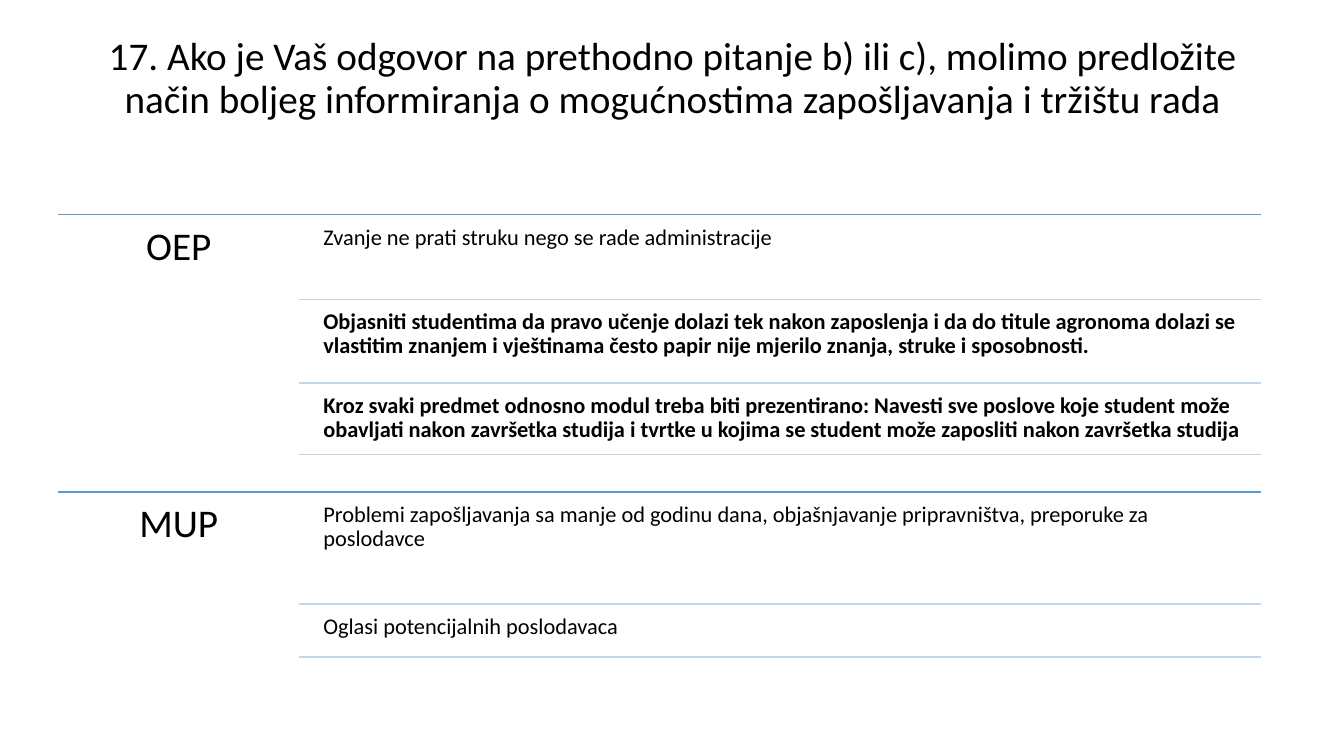
"""Build the survey slide on better informing students about employment."""
from dataclasses import dataclass

from pptx import Presentation
from pptx.dml.color import RGBColor as RGB
from pptx.enum.shapes import MSO_CONNECTOR as Conn
from pptx.enum.text import MSO_ANCHOR as Anchor, MSO_AUTO_SIZE as AutoSize, PP_ALIGN as Align
from pptx.oxml.ns import qn
from pptx.shapes.shapetree import GroupShapes
from pptx.text.text import TextFrame
from pptx.util import Cm, Pt


@dataclass(frozen=True)
class Theme:
    font: str = "Calibri"
    text: RGB = RGB(0x00, 0x00, 0x00)
    section_rule: RGB = RGB(0x5B, 0x9B, 0xD5)
    answer_rule: RGB = RGB(0xC4, 0xD5, 0xEB)
    heading_size: int = 28
    answer_size: int = 16
    rule_width: int = 1
    line_spacing: float = 0.9


@dataclass(frozen=True)
class Answer:
    text: str
    bottom: float
    bold: bool = False


@dataclass(frozen=True)
class Section:
    label: str
    top: float
    answers: tuple[Answer, ...]


THEME = Theme()
LEFT, ANSWER_LEFT, RIGHT = 1.47, 7.54, 31.78
ANSWER_INDENT, ANSWER_GAP = 0.44, 0.11
LABEL_INSET, ANSWER_INSET = 0.3, 0.17

TITLE = ("17. Ako je Vaš odgovor na prethodno pitanje b) ili c), molimo predložite "
         "način boljeg informiranja o mogućnostima zapošljavanja i tržištu rada")
SECTIONS = (
    Section("OEP", 5.41, (
        Answer("Zvanje ne prati struku nego se rade administracije", 7.54),
        Answer("Objasniti studentima da pravo učenje dolazi tek nakon zaposlenja i da do "
               "titule agronoma dolazi se vlastitim znanjem i vještinama često papir nije "
               "mjerilo znanja, struke i sposobnosti.", 9.65, True),
        Answer("Kroz svaki predmet odnosno modul treba biti prezentirano: Navesti sve poslove "
               "koje student može obavljati nakon završetka studija i tvrtke u kojima se "
               "student može zaposliti nakon završetka studija", 11.46, True),
    )),
    Section("MUP", 12.4, (
        Answer("Problemi zapošljavanja sa manje od godinu dana, objašnjavanje pripravništva, "
               "preporuke za poslodavce", 15.22),
        Answer("Oglasi potencijalnih poslodavaca", 16.56),
    )),
)


def write(tf: TextFrame, text: str, size: int, align: Align, bold: bool = False) -> None:
    """Fill a text frame with one formatted paragraph."""
    tf.word_wrap = True
    tf.auto_size = AutoSize.NONE
    p = tf.paragraphs[0]
    p.text = text
    p.alignment = align
    p.line_spacing = THEME.line_spacing
    p.font.name = THEME.font
    p.font.size = Pt(size)
    p.font.bold = bold
    p.font.color.rgb = THEME.text


def add_rule(shapes: GroupShapes, left: float, y: float, color: RGB) -> None:
    """Draw a horizontal rule ending at the right edge."""
    c = shapes.add_connector(Conn.STRAIGHT, Cm(left), Cm(y), Cm(RIGHT), Cm(y))
    c.line.color.rgb = color
    c.line.width = Pt(THEME.rule_width)
    sp_pr = c._element.spPr
    sp_pr.append(sp_pr.makeelement(qn("a:effectLst"), {}))


def add_box(shapes: GroupShapes, left: float, top: float, right: float,
            bottom: float, inset: float) -> TextFrame:
    """Add a text box between four edges with an equal inset."""
    sp = shapes.add_textbox(Cm(left), Cm(top), Cm(right - left), Cm(bottom - top))
    tf = sp.text_frame
    tf.margin_left = tf.margin_right = tf.margin_top = tf.margin_bottom = Cm(inset)
    return tf


def add_section(shapes: GroupShapes, section: Section) -> None:
    """Draw a section label with its ruled answers."""
    add_rule(shapes, LEFT, section.top, THEME.section_rule)
    label = add_box(shapes, LEFT, section.top, ANSWER_LEFT,
                    section.answers[-1].bottom, LABEL_INSET)
    write(label, section.label, THEME.heading_size, Align.CENTER)
    top = section.top
    for answer in section.answers:
        tf = add_box(shapes, ANSWER_LEFT + ANSWER_INDENT, top + ANSWER_GAP, RIGHT,
                     answer.bottom, ANSWER_INSET)
        write(tf, answer.text, THEME.answer_size, Align.LEFT, answer.bold)
        add_rule(shapes, ANSWER_LEFT, answer.bottom, THEME.answer_rule)
        top = answer.bottom


def main() -> None:
    """Build and save the presentation."""
    prs = Presentation()
    prs.slide_width, prs.slide_height = Cm(33.87), Cm(19.05)
    s = prs.slides.add_slide(prs.slide_layouts[5])
    title = s.shapes.title
    title.left, title.top, title.width, title.height = Cm(2.34), Cm(1.02), Cm(29.21), Cm(3.68)
    tf = title.text_frame
    tf.vertical_anchor = Anchor.MIDDLE
    tf.margin_top, tf.margin_bottom = Cm(0), Cm(1.73)
    write(tf, TITLE, THEME.heading_size, Align.CENTER)
    for section in SECTIONS:
        add_section(s.shapes.add_group_shape().shapes, section)
    prs.save("out.pptx")


if __name__ == "__main__":
    main()
